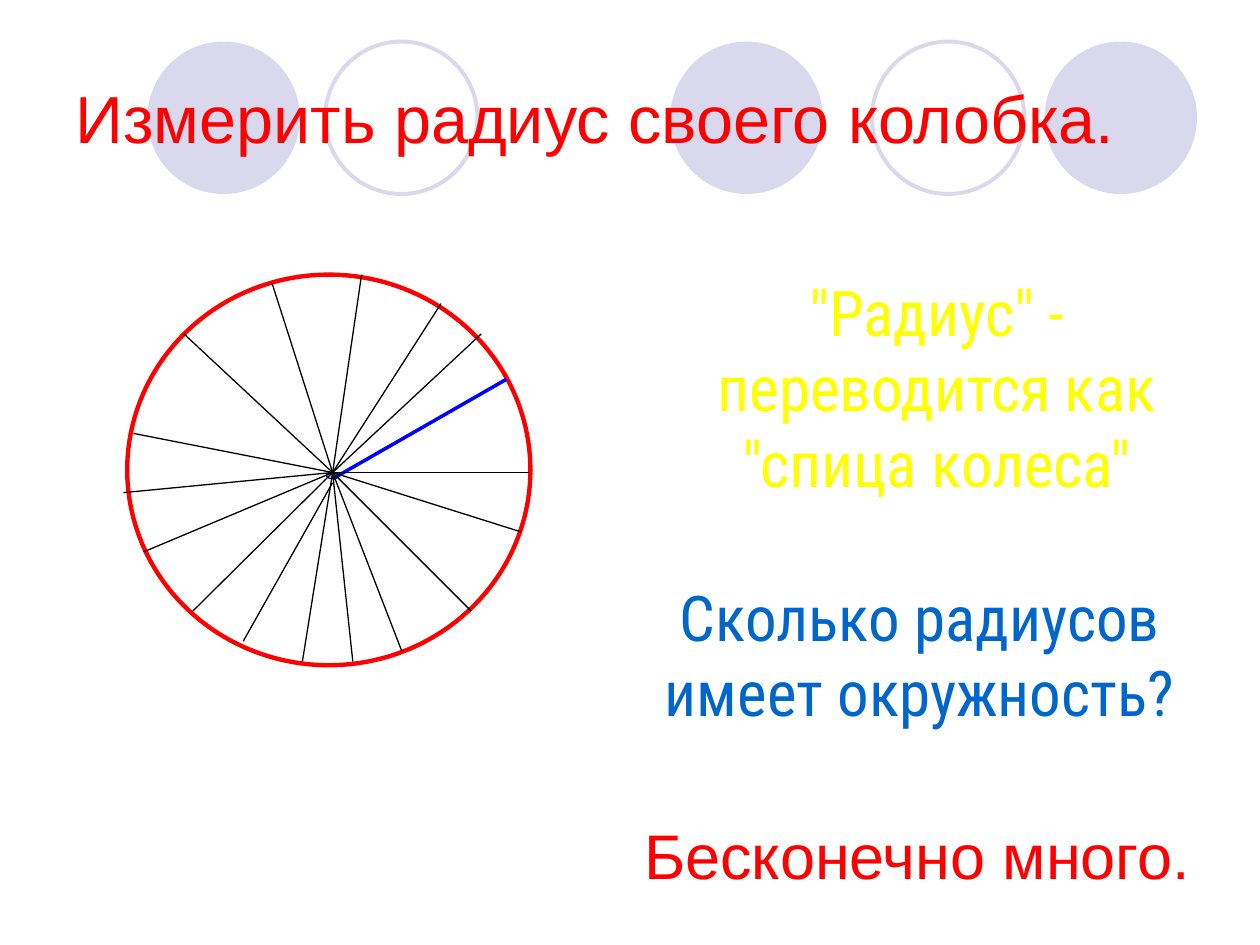
from pptx import Presentation
from pptx.dml.color import RGBColor
from pptx.enum.shapes import MSO_CONNECTOR as Link, MSO_SHAPE as Form
from pptx.enum.text import MSO_ANCHOR as Anchor, PP_ALIGN as Align
from pptx.oxml.ns import qn
from pptx.util import Inches, Pt
from lxml import etree

HUES = {"lilac": "D9D8EC", "red": "FF0000", "yellow": "FFFF00", "sky": "0066CC",
        "blue": "0000FF", "black": "000000", "white": "FFFFFF", "pale": "CCCCFF"}


def hue(name):
    return RGBColor.from_string(HUES[name])


def add_oval(slide, box, fill=None, line=None, width=1):
    oval = slide.shapes.add_shape(Form.OVAL, *map(Inches, box))
    oval.shadow.inherit = False
    if fill:
        oval.fill.solid()
        oval.fill.fore_color.rgb = hue(fill)
    else:
        oval.fill.background()
    if line:
        oval.line.color.rgb = hue(line)
        oval.line.width = Pt(width)
    else:
        oval.line.fill.background()


def add_line(slide, start, end, color="black", width=0.75):
    line = slide.shapes.add_connector(Link.STRAIGHT, *map(Inches, (*start, *end)))
    line.line.color.rgb = hue(color)
    line.line.width = Pt(width)
    etree.SubElement(line._element.spPr, qn("a:effectLst"))


def add_run(para, text, font, size, color):
    run = para.add_run()
    run.text = text
    run.font.name = font
    run.font.size = Pt(size)
    run.font.color.rgb = hue(color)


def add_band(slide, box):
    """Row of filled and hollow circles behind the title."""
    left, top, size = box
    for step, solid in ((0, True), (1.41, False), (4.15, True), (5.75, False), (7.12, True)):
        spot = (left + step, top, size, size)
        if solid:
            add_oval(slide, spot, fill="lilac")
        else:
            add_oval(slide, spot, line="lilac", width=2.25)


def add_title(slide, box, text):
    title = slide.shapes.title
    title.left, title.top, title.width, title.height = map(Inches, box)
    slide.shapes._spTree.append(title._element)  # in front of the circles
    frame = title.text_frame
    frame.vertical_anchor = Anchor.MIDDLE
    para = frame.paragraphs[0]
    para.alignment = Align.LEFT
    add_run(para, text, "Arial", 38, "red")


def add_wheel(slide, box):
    """Circle with its centre mark, spokes and one marked radius."""
    left, top, wide, high = box
    hub = (left + 1.63, top + 1.57)
    add_oval(slide, box, "white", "red", 2.5)
    add_oval(slide, (hub[0] - 0.05, hub[1], 0.1, 0.05), "pale", "blue", 0.75)
    add_line(slide, (hub[0], hub[1] + 0.05), (left + 3.01, top + 0.83), "blue", 2)
    rim = [(3.2, 1.57), (3.12, 2.04), (2.73, 2.67), (2.18, 2.99), (1.79, 3.07),
           (1.39, 3.07), (0.52, 2.67), (0.13, 2.2), (-0.03, 1.73), (0.05, 1.26),
           (0.45, 0.47), (1.15, 0.07), (1.86, 0), (2.49, 0.23), (2.81, 0.47)]
    for x, y in rim:
        add_line(slide, hub, (left + x, top + y))
    add_line(slide, (hub[0], hub[1] + 0.08), (left + 0.92, top + 2.91))


def add_note(slide, box, lines, font, color):
    note = slide.shapes.add_textbox(*map(Inches, box))
    frame = note.text_frame
    frame.word_wrap = False
    for i, text in enumerate(lines):
        para = frame.add_paragraph() if i else frame.paragraphs[0]
        para.alignment = Align.CENTER
        add_run(para, text, font, 36, color)


def main():
    deck = Presentation()
    deck.slide_width, deck.slide_height = Inches(10), Inches(7.5)
    slide = deck.slides.add_slide(deck.slide_layouts[5])
    add_band(slide, (1.17, 0.33, 1.21))
    add_title(slide, (0.5, 0.3, 9, 1.25), "Измерить радиус своего колобка.")
    add_wheel(slide, (1.01, 2.18, 3.2, 3.1))
    add_note(slide, (5.44, 2.12, 3.99, 1.94),
             ['"Радиус" -', "переводится как", '"спица колеса"'],
             "Roboto Condensed", "yellow")
    add_note(slide, (5.05, 4.54, 4.5, 1.49),
             ["Сколько радиусов", "имеет окружность?"], "Roboto Condensed", "sky")
    add_note(slide, (4.88, 6.43, 4.8, 0.67), ["Бесконечно много."], "Arial", "red")
    deck.save("out.pptx")


if __name__ == "__main__":
    main()
